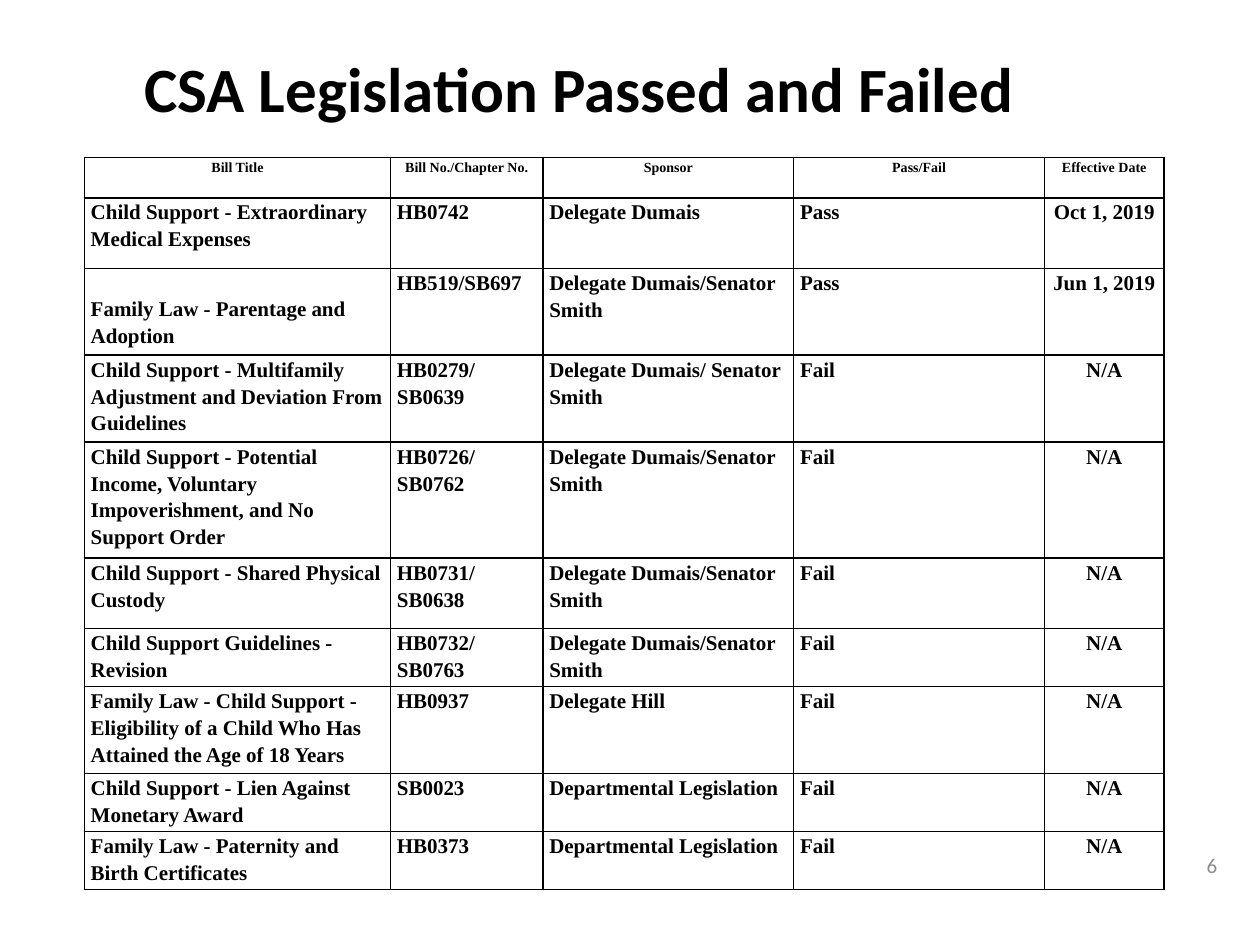
from pptx import Presentation
from pptx.dml.color import RGBColor
from pptx.enum.text import MSO_ANCHOR, PP_ALIGN
from pptx.oxml import parse_xml
from pptx.oxml.ns import nsdecls
from pptx.util import Inches, Pt

BLACK = RGBColor(0x00, 0x00, 0x00)
GRAY = RGBColor(0x8C, 0x8C, 0x8C)
HEADING_FONT = "Calibri"
TABLE_FONT = "Times New Roman"

COLUMN_WIDTHS = [2.43, 1.21, 1.99, 1.99, 0.95]
ROW_HEIGHTS = [0.32, 0.56, 0.69, 0.69, 0.92, 0.56, 0.46, 0.69, 0.46, 0.46]
HEADER = ["Bill Title", "Bill No./Chapter No.", "Sponsor", "Pass/Fail", "Effective Date"]
BILLS = [
    ["Child Support - Extraordinary Medical Expenses", "HB0742",
     "Delegate Dumais", "Pass", "Oct 1, 2019"],
    ["Family Law - Parentage and Adoption", "HB519/SB697",
     "Delegate Dumais/Senator Smith", "Pass", "Jun 1, 2019"],
    ["Child Support - Multifamily Adjustment and Deviation From Guidelines",
     "HB0279/SB0639", "Delegate Dumais/ Senator Smith", "Fail", "N/A"],
    ["Child Support - Potential Income, Voluntary Impoverishment, and No Support Order",
     "HB0726/SB0762", "Delegate Dumais/Senator Smith", "Fail", "N/A"],
    ["Child Support - Shared Physical Custody", "HB0731/SB0638",
     "Delegate Dumais/Senator Smith", "Fail", "N/A"],
    ["Child Support Guidelines - Revision", "HB0732/SB0763",
     "Delegate Dumais/Senator Smith", "Fail", "N/A"],
    ["Family Law - Child Support - Eligibility of a Child Who Has Attained the Age of 18 Years",
     "HB0937", "Delegate Hill", "Fail", "N/A"],
    ["Child Support - Lien Against Monetary Award", "SB0023",
     "Departmental Legislation", "Fail", "N/A"],
    ["Family Law - Paternity and Birth Certificates", "HB0373",
     "Departmental Legislation", "Fail", "N/A"],
]


def format_text(paragraph, font_name, size, color, bold, align):
    paragraph.alignment = align
    for run in paragraph.runs:
        run.font.name = font_name
        run.font.size = Pt(size)
        run.font.bold = bold
        run.font.color.rgb = color


def add_text(slide, text, left, top, width, height, size, color, bold, align):
    box = slide.shapes.add_textbox(Inches(left), Inches(top), Inches(width), Inches(height))
    frame = box.text_frame
    frame.word_wrap = True
    frame.vertical_anchor = MSO_ANCHOR.MIDDLE
    frame.text = text
    format_text(frame.paragraphs[0], HEADING_FONT, size, color, bold, align)
    return frame


def add_borders(cell):
    properties = cell._tc.get_or_add_tcPr()
    for position, side in enumerate(("lnL", "lnR", "lnT", "lnB")):
        border = parse_xml(
            f'<a:{side} {nsdecls("a")} w="{Pt(1)}"><a:solidFill>'
            f'<a:srgbClr val="{BLACK}"/></a:solidFill></a:{side}>')
        properties.insert(position, border)


def fill_cell(cell, text, size, align):
    cell.margin_left = cell.margin_right = Inches(0.05)
    cell.margin_top = cell.margin_bottom = 0
    cell.fill.background()
    cell.text_frame.text = text
    paragraph = cell.text_frame.paragraphs[0]
    paragraph.line_spacing = 1.15
    format_text(paragraph, TABLE_FONT, size, BLACK, True, align)
    add_borders(cell)


def add_bill_table(slide):
    rows = [HEADER] + BILLS
    table = slide.shapes.add_table(
        len(rows), len(HEADER), Inches(0.67), Inches(1.25),
        Inches(sum(COLUMN_WIDTHS)), Inches(sum(ROW_HEIGHTS))).table
    table.horz_banding = False
    for column, width in zip(table.columns, COLUMN_WIDTHS):
        column.width = Inches(width)
    for row, height in zip(table.rows, ROW_HEIGHTS):
        row.height = Inches(height)

    # Header and date column are centred
    for r, texts in enumerate(rows):
        for c, text in enumerate(texts):
            centred = r == 0 or c == len(HEADER) - 1
            fill_cell(table.cell(r, c), text, 8 if r == 0 else 12,
                      PP_ALIGN.CENTER if centred else PP_ALIGN.LEFT)

    # The parentage bill title sits one line lower
    table.cell(2, 0).margin_top = Inches(0.21)


def main():
    prs = Presentation()
    prs.slide_width, prs.slide_height = Inches(10), Inches(7.5)
    slide = prs.slides.add_slide(prs.slide_layouts[6])

    # Title, set slightly right of and below the box centre
    title = add_text(slide, "CSA Legislation Passed and Failed", 0.03, 0, 9, 1.25,
                     36, BLACK, True, PP_ALIGN.CENTER)
    title.margin_left = Inches(0.23)
    title.margin_top = Inches(0.19)

    # Slide number
    add_text(slide, "6", 7.43, 6.67, 2.33, 0.4, 12, GRAY, False, PP_ALIGN.RIGHT)

    # Bills
    add_bill_table(slide)

    prs.save("out.pptx")


if __name__ == "__main__":
    main()
